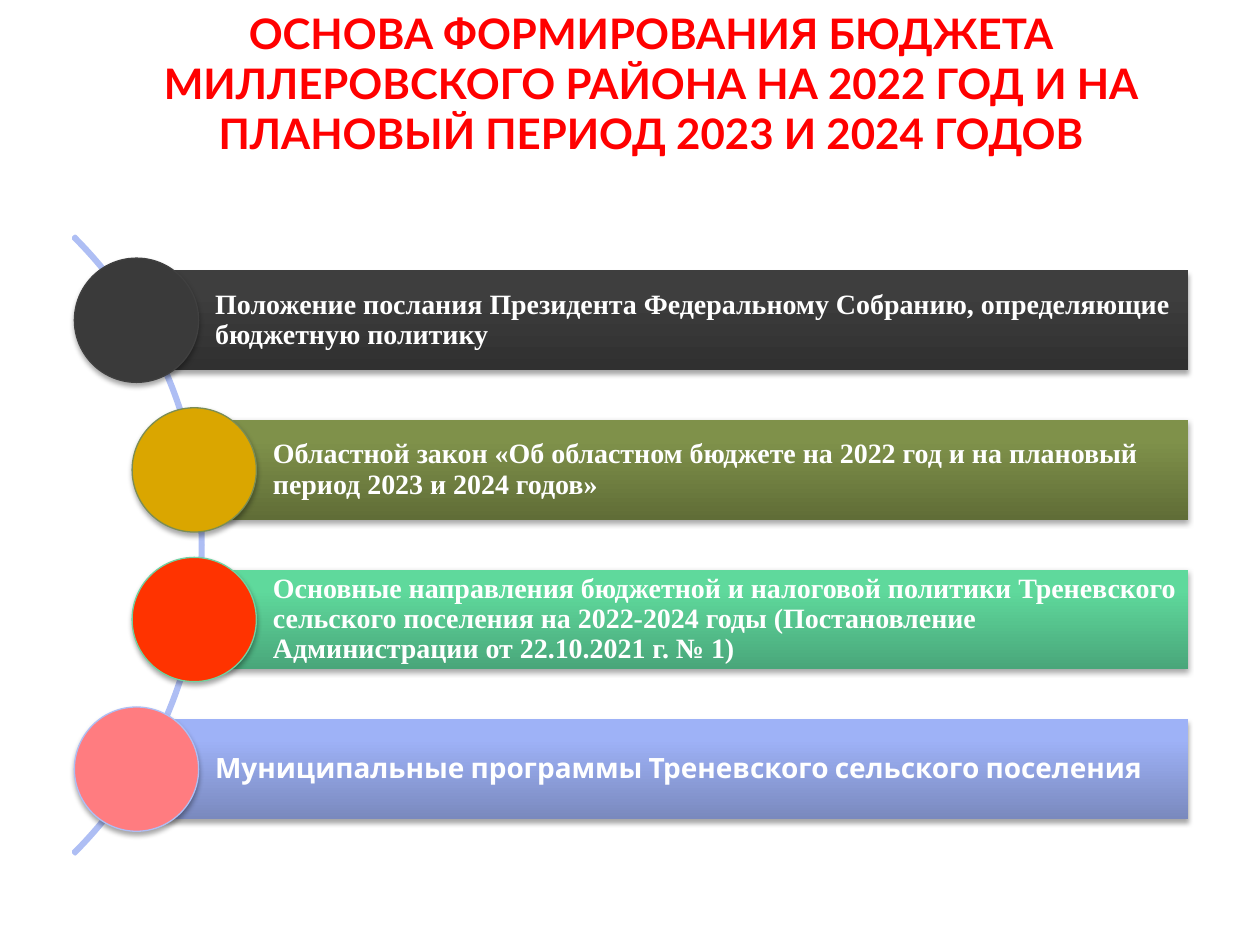
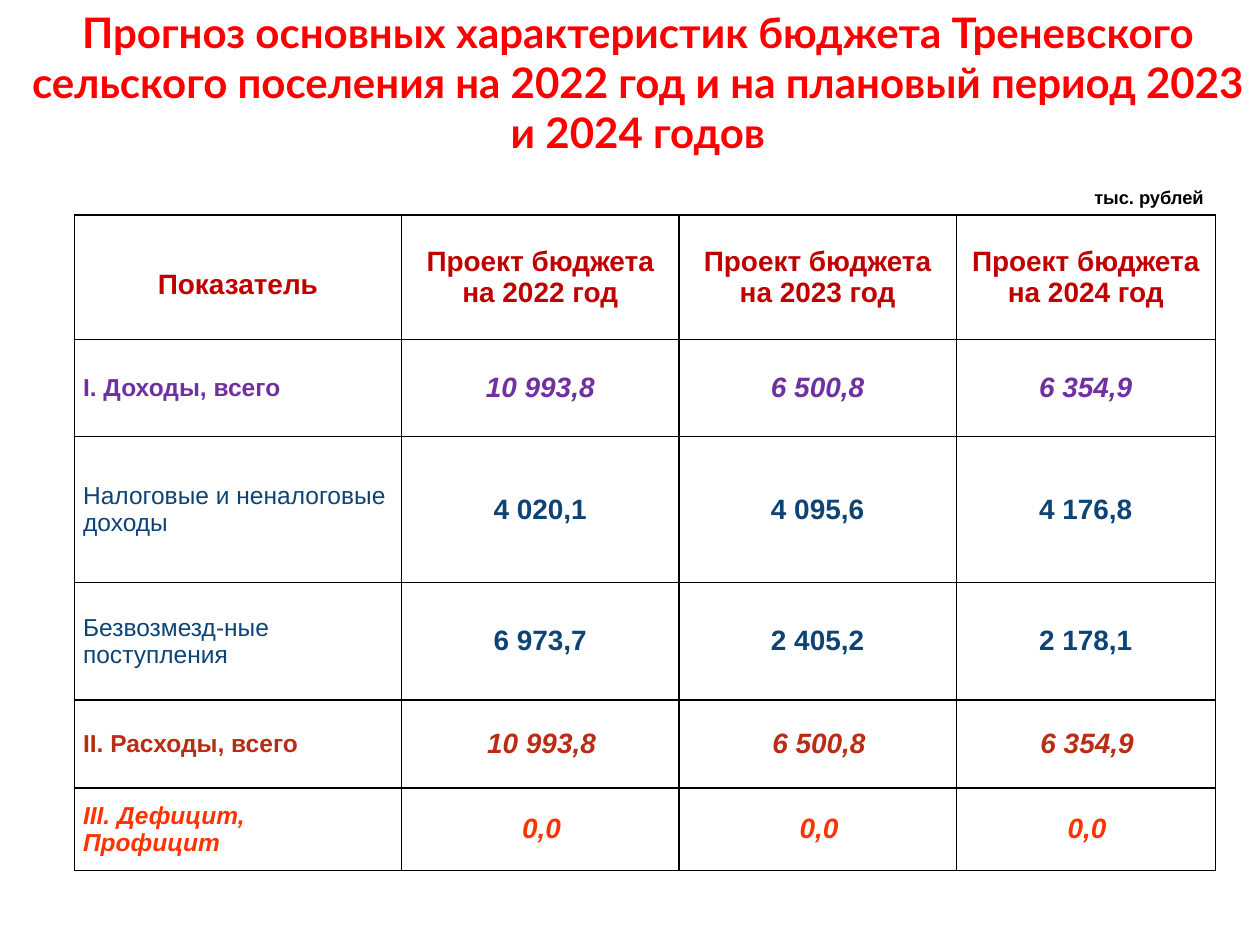
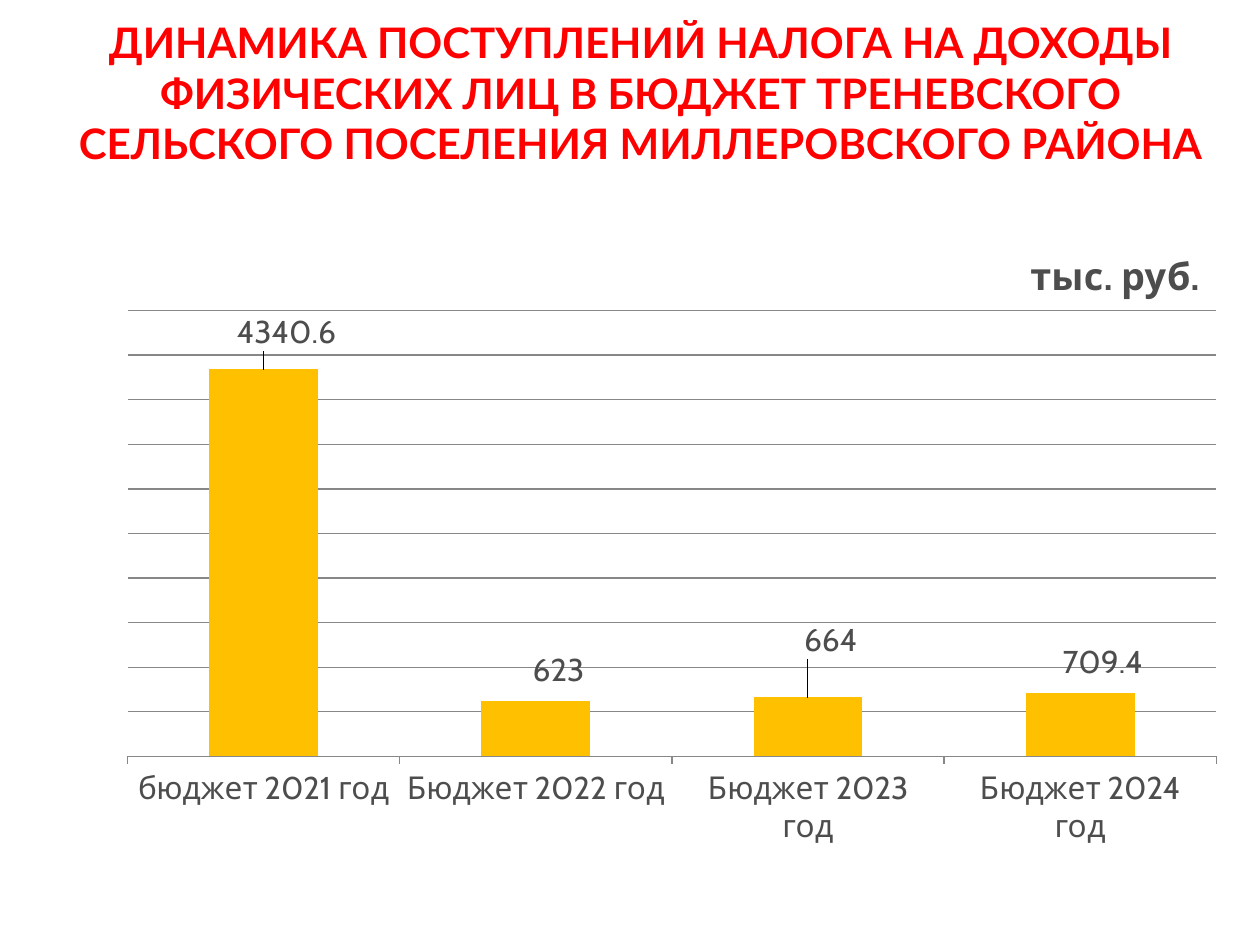
from lxml import etree
from pptx import Presentation
from pptx.chart.data import CategoryChartData
from pptx.dml.color import RGBColor
from pptx.enum.chart import XL_CHART_TYPE, XL_LABEL_POSITION, XL_TICK_LABEL_POSITION, XL_TICK_MARK
from pptx.enum.shapes import MSO_SHAPE
from pptx.enum.text import MSO_ANCHOR, PP_ALIGN
from pptx.oxml import parse_xml
from pptx.oxml.ns import nsdecls, qn
from pptx.util import Pt

RED, BLACK, WHITE, GREY = "FF0000", "000000", "FFFFFF", "4D4D4D"
GRID, GOLD, ARC = "878787", "FFC000", "AEBEF4"
HEADER, INCOME, DETAIL, EXPENSE, DEFICIT = "C00000", "7030A0", "0E4475", "B92D14", "FF3300"


def color(value):
    return RGBColor.from_string(value)


def apply(obj, **values):
    for name, value in values.items():
        setattr(obj, name, value)


def style_font(font, size, name, fill, bold=False, italic=False):
    apply(font, size=Pt(size), name=name, bold=bold, italic=italic)
    font.color.rgb = color(fill)


def add_shadow(sp):
    sp._element.spPr.append(parse_xml(
        f'<a:effectLst {nsdecls("a")}><a:outerShdw blurRad="{Pt(3.1)}" dist="{Pt(1.8)}" '
        'dir="5400000" rotWithShape="0"><a:srgbClr val="000000"><a:alpha val="35000"/>'
        '</a:srgbClr></a:outerShdw></a:effectLst>'))


def set_layout(element, index, edge=False, inner=False, **parts):
    """Place a chart part by fractions of the chart; without edge, x and y are offsets."""
    for old in element.findall(qn("c:layout")):
        element.remove(old)
    layout = parse_xml(f'<c:layout {nsdecls("c")}><c:manualLayout/></c:layout>')
    values = {"layoutTarget": "inner"} if inner else {}
    if edge:
        values |= {"xMode": "edge", "yMode": "edge"}
    for tag, value in (values | parts).items():
        etree.SubElement(layout[0], qn(f"c:{tag}")).set("val", str(value))
    element.insert(index, layout)


def set_borders(cell):
    tcPr = cell._tc.get_or_add_tcPr()
    for index, side in enumerate(("lnL", "lnR", "lnT", "lnB")):
        tcPr.insert(index, parse_xml(
            f'<a:{side} {nsdecls("a")} w="{Pt(1)}"><a:solidFill><a:srgbClr val="{BLACK}"/>'
            f'</a:solidFill></a:{side}>'))


class Deck:
    """Holds the presentation, its shared style and the current slide."""

    def __init__(self):
        self.prs = Presentation()
        apply(self.prs, slide_width=Pt(720), slide_height=Pt(540))
        self.s = None

    def new_slide(self, title, x, y, w):
        self.s = self.prs.slides.add_slide(self.prs.slide_layouts[6])
        self.text(title, x, y, w, 94, PP_ALIGN.CENTER, size=24, name="Lato", fill=RED, bold=True)

    def fill_text(self, tf, text, align, spacing=None, indent=0, **font):
        tf.word_wrap = True
        tf.text = text
        for p in tf.paragraphs:
            apply(p, alignment=align, line_spacing=spacing)
            if indent:
                p._p.get_or_add_pPr().set("indent", str(Pt(indent)))
            for r in p.runs:
                style_font(r.font, **font)

    def text(self, text, x, y, w, h, align, **font):
        sp = self.s.shapes.add_textbox(Pt(x), Pt(y), Pt(w), Pt(h))
        self.fill_text(sp.text_frame, text, align, **font)

    def shape(self, kind, x, y, w, h, fill=None, line=None, width=0.75):
        """Draw a preset shape; a pair of fill colours runs from bottom to top."""
        sp = self.s.shapes.add_shape(kind, Pt(x), Pt(y), Pt(w), Pt(h))
        if fill is None:
            sp.fill.background()
        elif isinstance(fill, tuple):
            sp.fill.gradient()
            sp.fill.gradient_angle = 90
            for stop, value, position in zip(sp.fill.gradient_stops, fill, (0, 0.8)):
                stop.color.rgb = color(value)
                stop.position = position
        else:
            sp.fill.solid()
            sp.fill.fore_color.rgb = color(fill)
        if line:
            sp.line.color.rgb = color(line)
            sp.line.width = Pt(width)
        else:
            sp.line.fill.background()
        return sp

    def arc(self, x, y, size):
        sp = self.shape(MSO_SHAPE.BLOCK_ARC, x, y, size, size, line=ARC, width=2)
        sp.shadow.inherit = False
        for index, value in enumerate((18900000, 2700000, 300)):
            sp.adjustments[index] = value / 100000

    def bar(self, text, x, middle, right, gradient, dot, line, font):
        """Draw a text bar with a round marker centred on its left end."""
        height, dot_size = 57, 71
        sp = self.shape(MSO_SHAPE.RECTANGLE, x, middle - height / 2, right - x, height, gradient)
        add_shadow(sp)
        apply(sp.text_frame, margin_left=Pt(45), margin_right=Pt(3), margin_top=Pt(3),
              margin_bottom=Pt(3), vertical_anchor=MSO_ANCHOR.MIDDLE)
        self.fill_text(sp.text_frame, text, PP_ALIGN.LEFT, spacing=0.9,
                       size=16, name=font, fill=WHITE, bold=True)
        add_shadow(self.shape(MSO_SHAPE.OVAL, x - dot_size / 2, middle - dot_size / 2,
                              dot_size, dot_size, dot, line))

    def table(self, x, y, widths, heights, rows):
        """Each row is its texts, then the formats of its first and its other cells."""
        table = self.s.shapes.add_table(len(rows), len(widths), Pt(x), Pt(y),
                                        Pt(sum(widths)), Pt(sum(heights))).table
        apply(table, first_row=False, horz_banding=False)
        for column, width in zip(table.columns, widths):
            column.width = Pt(width)
        for row, height, (texts, first, others) in zip(table.rows, heights, rows):
            row.height = Pt(height)
            for index, (cell, text) in enumerate(zip(row.cells, texts)):
                apply(cell, margin_left=Pt(5), margin_right=Pt(5), margin_top=0,
                      margin_bottom=0, vertical_anchor=MSO_ANCHOR.MIDDLE)
                cell.fill.background()
                set_borders(cell)
                self.fill_text(cell.text_frame, text, name="Arial",
                               **(others if index else first))

    def column_chart(self, x, y, w, h, title, values, offsets):
        data = CategoryChartData()
        data.categories = list(values)
        data.add_series("Series 1", list(values.values()))
        chart = self.s.shapes.add_chart(XL_CHART_TYPE.COLUMN_CLUSTERED, Pt(x), Pt(y),
                                        Pt(w), Pt(h), data).chart
        chart.has_legend = False
        style_font(chart.font, 18, "Cabin", GREY)
        self.fill_text(chart.chart_title.text_frame, title, PP_ALIGN.CENTER,
                       size=21.6, name="Cabin", fill=GREY, bold=True)
        set_layout(chart.chart_title._element, 1, edge=True, x=0.81, y=0.05)
        set_layout(chart._chartSpace.chart.plotArea, 0, edge=True, inner=True,
                   x=0.02, y=0.155, w=0.96, h=0.687)
        axis = chart.value_axis
        apply(axis, minimum_scale=0, maximum_scale=5000, major_unit=500,
              has_major_gridlines=True, visible=False)
        axis.major_gridlines.format.line.color.rgb = color(GRID)
        axis = chart.category_axis
        apply(axis, major_tick_mark=XL_TICK_MARK.OUTSIDE,
              tick_label_position=XL_TICK_LABEL_POSITION.LOW)
        axis.format.line.color.rgb = color(GRID)
        plot = chart.plots[0]
        apply(plot, vary_by_categories=False, gap_width=150)
        series = plot.series[0]
        series.format.fill.solid()
        series.format.fill.fore_color.rgb = color(GOLD)
        series.data_labels.show_value = True
        for index, (dx, dy) in enumerate(offsets):
            series.points[index].data_label.position = XL_LABEL_POSITION.OUTSIDE_END
            set_layout(series._element.xpath("c:dLbls/c:dLbl")[index], 1, x=dx, y=dy)


def add_basis(deck):
    deck.new_slide("ОСНОВА ФОРМИРОВАНИЯ БЮДЖЕТА МИЛЛЕРОВСКОГО РАЙОНА НА 2022 ГОД И НА "
                   "ПЛАНОВЫЙ ПЕРИОД 2023 И 2024 ГОДОВ", 48, 0.5, 648)
    deck.arc(-383, 62, 499)
    bars = [
        ("Положение послания Президента Федеральному Собранию, определяющие бюджетную политику",
         78, ("303030", "3E3E3E"), "3A3A3A", "404040", "Times New Roman"),
        ("Областной закон «Об областном бюджете на 2022 год и на плановый период 2023 и 2024 годов»",
         111, ("606D37", "7F914A"), "DAA600", "7B8D54", "Times New Roman"),
        ("Основные направления бюджетной и налоговой политики Треневского сельского поселения "
         "на 2022-2024 годы (Постановление Администрации от 22.10.2021 г. № 1)",
         111, ("49A67A", "5FD99C"), "FF3300", "71D1A0", "Times New Roman"),
        ("Муниципальные программы Треневского сельского поселения",
         78, ("7A89BE", "9EB2F7"), "FF7C80", ARC, "Cabin"),
    ]
    for index, (text, x, gradient, dot, line, font) in enumerate(bars):
        deck.bar(text, x, 183 + index * 85.5, 679, gradient, dot, line, font)


def add_forecast(deck):
    deck.new_slide("Прогноз основных характеристик бюджета Треневского сельского поселения "
                   "на 2022 год и на плановый период 2023 и 2024 годов", 9, 0, 711)
    deck.text("тыс. рублей", 593, 103, 102, 20, PP_ALIGN.RIGHT,
              size=10.5, name="Arial", fill=BLACK, bold=True)

    def label(fill, **more):
        return {"align": PP_ALIGN.LEFT, "size": 14, "fill": fill} | more

    def value(fill, **more):
        return {"align": PP_ALIGN.CENTER, "size": 16, "fill": fill, "bold": True} | more

    years = [f"Проект бюджета на {year} год" for year in (2022, 2023, 2024)]
    deck.table(42.5, 123, [187, 158.5, 158.5, 148], [71, 55.5, 83.5, 67, 50.5, 47], [
        (["Показатель", *years], value(HEADER, spacing=1.5, indent=-5), value(HEADER)),
        (["I. Доходы, всего", "10 993,8", "6 500,8", "6 354,9"],
         label(INCOME, bold=True), value(INCOME, italic=True, indent=-5)),
        (["Налоговые и неналоговые доходы", "4 020,1", "4 095,6", "4 176,8"],
         label(DETAIL), value(DETAIL, indent=-5)),
        (["Безвозмезд-ные поступления", "6 973,7", "2 405,2", "2 178,1"],
         label(DETAIL), value(DETAIL, indent=-5)),
        (["II. Расходы, всего", "10 993,8", "6 500,8", "6 354,9"],
         label(EXPENSE, bold=True), value(EXPENSE, italic=True, indent=1.5)),
        (["III. Дефицит,\nПрофицит", "0,0", "0,0", "0,0"],
         label(DEFICIT, bold=True, italic=True), value(DEFICIT, italic=True, indent=1.5)),
    ])


def add_income_tax(deck):
    deck.new_slide("ДИНАМИКА ПОСТУПЛЕНИЙ НАЛОГА НА ДОХОДЫ\vФИЗИЧЕСКИХ ЛИЦ В БЮДЖЕТ ТРЕНЕВСКОГО "
                   "СЕЛЬСКОГО ПОСЕЛЕНИЯ МИЛЛЕРОВСКОГО РАЙОНА", 24, 6, 684)
    values = {"бюджет 2021 год": 4340.6, "Бюджет 2022 год": 623,
              "Бюджет 2023 год": 664, "Бюджет 2024 год": 709.4}
    deck.column_chart(60, 120, 648, 371, "тыс. руб.", values,
                      [(0.02, -0.02), (0.02, -0.01), (0.02, -0.05), (0.02, -0.01)])


def main():
    deck = Deck()
    add_basis(deck)
    add_forecast(deck)
    add_income_tax(deck)
    deck.prs.save("out.pptx")


if __name__ == "__main__":
    main()
